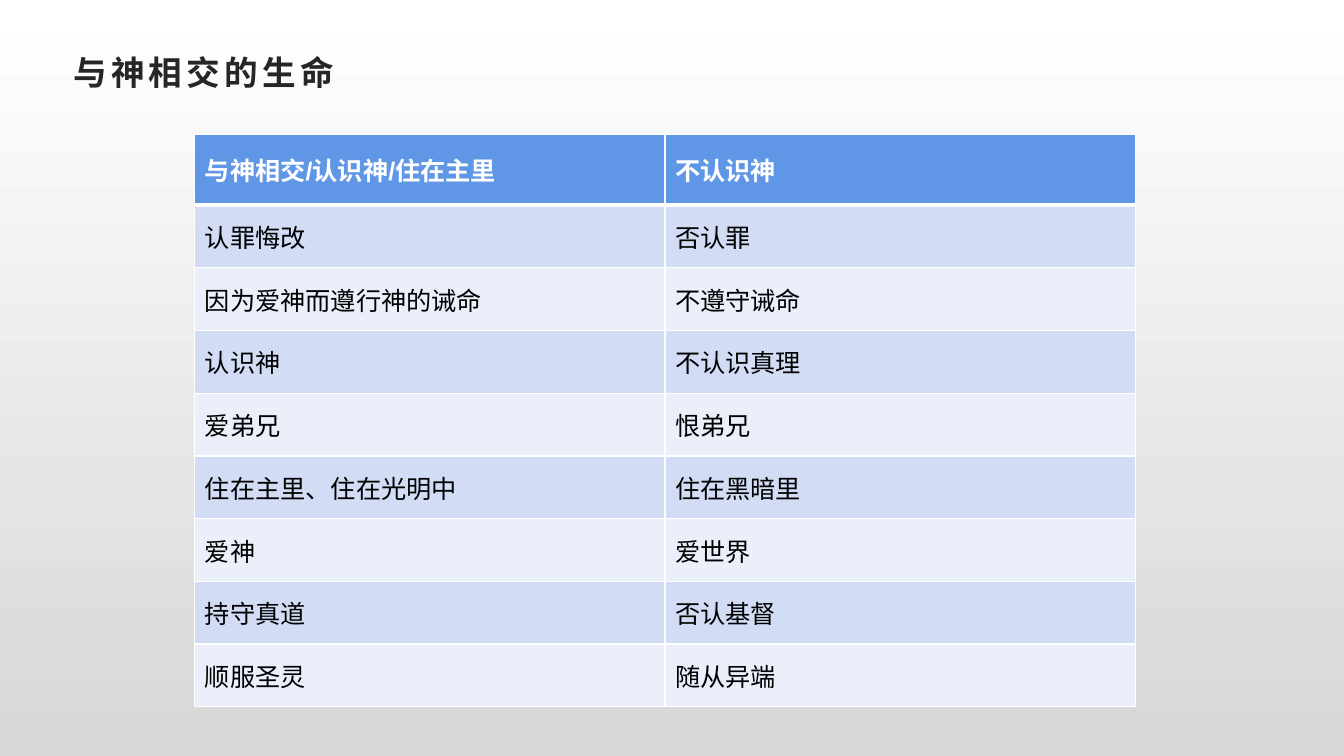
from lxml import etree
from pptx import Presentation
from pptx import util as u
from pptx.dml.color import RGBColor
from pptx.enum import text
from pptx.oxml.ns import qn

FONT = "Arial"
WHITE = "FFFFFF"
HEADER_FILL = "6096E6"
BAND_FILLS = ("D2DDF5", "EAEFFA")
HEADER_HEIGHT, ROW_HEIGHT = 1.78, 1.58

COMPARISON = [
    ("与神相交/认识神/住在主里", "不认识神"),
    ("认罪悔改", "否认罪"),
    ("因为爱神而遵行神的诫命", "不遵守诫命"),
    ("认识神", "不认识真理"),
    ("爱弟兄", "恨弟兄"),
    ("住在主里、住在光明中", "住在黑暗里"),
    ("爱神", "爱世界"),
    ("持守真道", "否认基督"),
    ("顺服圣灵", "随从异端"),
]


def color(value):
    return RGBColor.from_string(value)


def write(frame, words, size, ink, bold):
    frame.vertical_anchor = text.MSO_ANCHOR.MIDDLE
    span = frame.paragraphs[0].add_run()
    span.text = words
    span.font.name = FONT
    span.font.size = u.Pt(size)
    span.font.bold = bold
    span.font.color.rgb = color(ink)
    return span


def set_borders(cell, widths):
    """Draw white borders; widths maps the sides L, R, T, B to points."""
    properties = cell._tc.get_or_add_tcPr()
    for index, (side, width) in enumerate(widths.items()):
        line = etree.Element(qn(f"a:ln{side}"), w=str(u.Pt(width)))
        fill = etree.SubElement(line, qn("a:solidFill"))
        etree.SubElement(fill, qn("a:srgbClr"), val=WHITE)
        properties.insert(index, line)


def paint_background(page):
    fill = page.background.fill
    fill.gradient()
    fill.gradient_angle = 270
    for stop, shade in zip(fill.gradient_stops, (WHITE, "D7D7D7")):
        stop.color.rgb = color(shade)


def add_title(page, left, top, width, height):
    box = page.shapes.add_textbox(u.Cm(left), u.Cm(top), u.Cm(width), u.Cm(height))
    box.text_frame.word_wrap = True
    span = write(box.text_frame, "与神相交的生命", 24, "262626", True)
    span.font._element.set("spc", "300")


def add_comparison(page, left, top, width):
    height = HEADER_HEIGHT + ROW_HEIGHT * (len(COMPARISON) - 1)
    table = page.shapes.add_table(
        len(COMPARISON), 2, u.Cm(left), u.Cm(top), u.Cm(width), u.Cm(height)
    ).table
    for column in table.columns:
        column.width = u.Cm(width / 2)
    for row, entries in enumerate(COMPARISON):
        header = row == 0
        table.rows[row].height = u.Cm(HEADER_HEIGHT if header else ROW_HEIGHT)
        for column, words in enumerate(entries):
            cell = table.cell(row, column)
            cell.fill.solid()
            cell.fill.fore_color.rgb = color(
                HEADER_FILL if header else BAND_FILLS[(row - 1) % 2]
            )
            write(cell.text_frame, words, 18, WHITE if header else "000000", header)
            cell.vertical_anchor = text.MSO_ANCHOR.MIDDLE
            set_borders(cell, {
                "L": 1, "R": 1, "T": 3 if row == 1 else 1, "B": 3 if header else 1
            })


def main():
    deck = Presentation()
    deck.slide_width, deck.slide_height = u.Cm(33.87), u.Cm(19.05)
    page = deck.slides.add_slide(deck.slide_layouts[6])
    paint_background(page)
    add_title(page, 1.6, 0.84, 30.48, 1.96)
    add_comparison(page, 4.91, 3.39, 23.7)
    deck.save("out.pptx")


if __name__ == "__main__":
    main()
